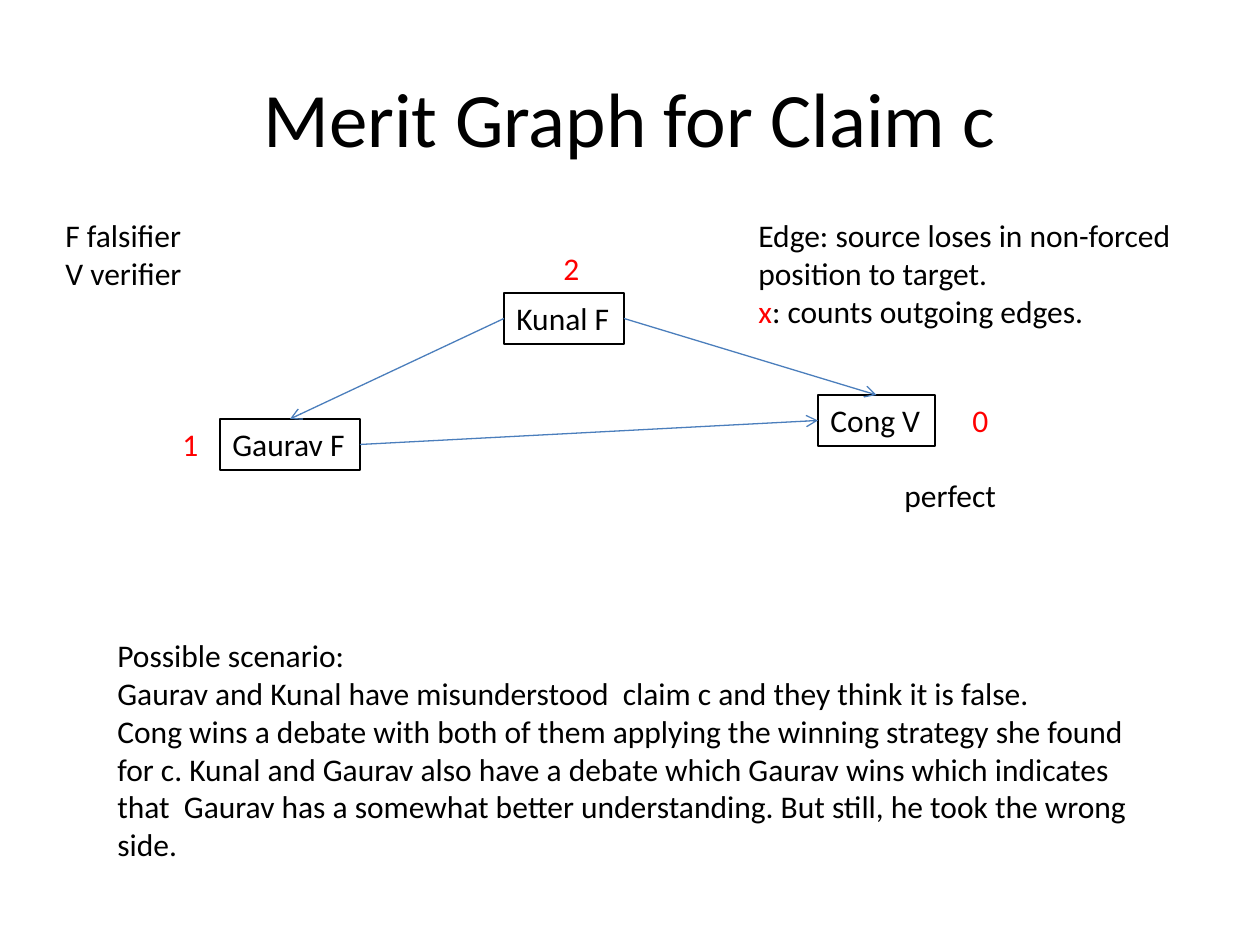
from lxml import etree
from pptx import Presentation, util as u
from pptx.dml.color import RGBColor
from pptx.enum import shapes, text
from pptx.oxml.ns import qn

PX_PER_INCH = 126
FONT = "Calibri"
COLORS = {"ink": "000000", "count": "FF0000", "edge": "4B7EBC"}
TOP, LEFT, BOTTOM, RIGHT = range(4)

PEOPLE = {
    "Gaurav": ("Gaurav F", (220, 419, 140, 51)),
    "Kunal": ("Kunal F", (504, 293, 120, 51)),
    "Cong": ("Cong V", (818, 395, 117, 51)),
}
LOSSES = [
    ("Kunal", RIGHT, "Cong", TOP),
    ("Gaurav", RIGHT, "Cong", LEFT),
    ("Kunal", LEFT, "Gaurav", TOP),
]
COUNTS = [("2", (551, 243)), ("1", (170, 419)), ("0", (960, 395))]
LEGEND = ["F falsifier", "V verifier"]
EDGE_RULE = [
    "Edge: source loses in non-forced",
    "position to target.",
    [("x", "count"), (": counts outgoing edges.", "ink")],
]
SCENARIO = [
    "Possible scenario:",
    "Gaurav and Kunal have misunderstood  claim c and they think it is false.",
    "Cong wins a debate with both of them applying the winning strategy she found",
    "for c. Kunal and Gaurav also have a debate which Gaurav wins which indicates",
    "that  Gaurav has a somewhat better understanding. But still, he took the wrong",
    "side.",
]


def px(length):
    return u.Inches(length / PX_PER_INCH)


def rgb(name):
    return RGBColor.from_string(COLORS[name])


def write(frame, lines, color="ink", size=18, align=text.PP_ALIGN.LEFT, **overrides):
    formats = {
        "word_wrap": False,
        "auto_size": text.MSO_AUTO_SIZE.SHAPE_TO_FIT_TEXT,
        "vertical_anchor": text.MSO_ANCHOR.TOP,
        **overrides,
    }
    for name, value in formats.items():
        setattr(frame, name, value)
    for index, line in enumerate(lines):
        paragraph = frame.add_paragraph() if index else frame.paragraphs[0]
        paragraph.alignment = align
        for words, shade in [(line, color)] if isinstance(line, str) else line:
            run = paragraph.add_run()
            run.text = words
            for name, value in {"name": FONT, "size": u.Pt(size)}.items():
                setattr(run.font, name, value)
            run.font.color.rgb = rgb(shade)


def add_label(slide, box, lines, **formats):
    label = slide.shapes.add_textbox(*map(px, box))
    write(label.text_frame, lines, **formats)


def add_person(slide, name, box):
    person = slide.shapes.add_shape(shapes.MSO_SHAPE.RECTANGLE, *map(px, box))
    person.shadow.inherit = False
    person.fill.background()
    person.line.color.rgb = rgb("ink")
    person.line.width = u.Pt(0.75)
    write(person.text_frame, [name])
    return person


def add_loss(slide, loser, loser_side, winner, winner_side):
    edge = slide.shapes.add_connector(shapes.MSO_CONNECTOR.STRAIGHT, 0, 0, 0, 0)
    edge.begin_connect(loser, loser_side)
    edge.end_connect(winner, winner_side)
    edge.line.color.rgb = rgb("edge")
    edge.line.width = u.Pt(0.75)
    etree.SubElement(edge.line._get_or_add_ln(), qn("a:tailEnd"), type="arrow")
    etree.SubElement(edge._element.spPr, qn("a:effectLst"))


def main():
    deck = Presentation()
    deck.slide_width, deck.slide_height = px(1260), px(945)
    slide = deck.slides.add_slide(deck.slide_layouts[6])

    add_label(slide, (63, 38, 1134, 157), ["Merit Graph for Claim c"], size=44,
              align=text.PP_ALIGN.CENTER, word_wrap=True,
              auto_size=text.MSO_AUTO_SIZE.NONE,
              vertical_anchor=text.MSO_ANCHOR.MIDDLE)

    people = {key: add_person(slide, *person) for key, person in PEOPLE.items()}
    for loser, loser_side, winner, winner_side in LOSSES:
        add_loss(slide, people[loser], loser_side, people[winner], winner_side)

    for count, corner in COUNTS:
        add_label(slide, (*corner, 41, 51), [count], color="count")
    add_label(slide, (892, 470, 118, 51), ["perfect"])
    add_label(slide, (53, 210, 143, 89), LEGEND)
    add_label(slide, (746, 210, 450, 127), EDGE_RULE)
    add_label(slide, (105, 630, 1045, 242), SCENARIO)

    deck.save("out.pptx")


if __name__ == "__main__":
    main()
